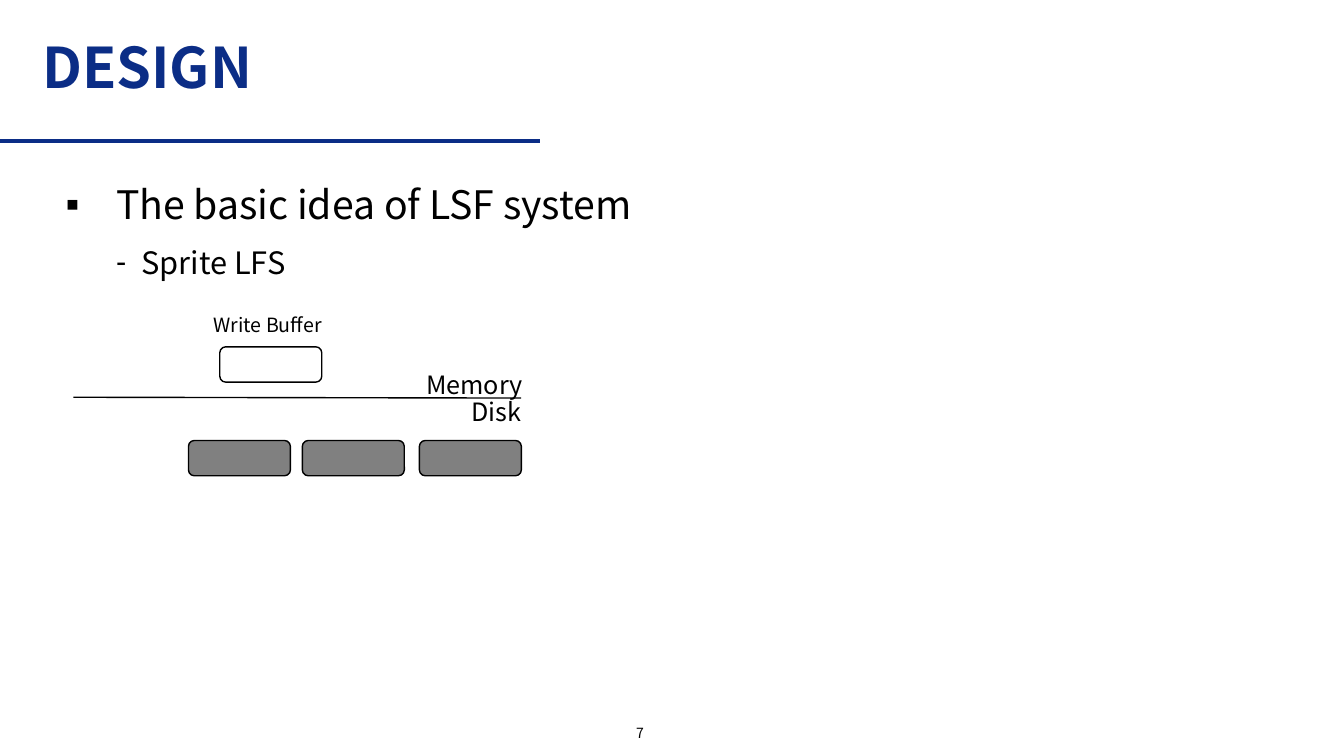
"""Build the design slide on the basic idea of a log-structured file system."""
from dataclasses import dataclass

import lxml.etree
import pptx
import pptx.dml.color
import pptx.enum.shapes
import pptx.enum.text
import pptx.oxml.ns
import pptx.util

Cm = pptx.util.Cm
Pt = pptx.util.Pt
RGBColor = pptx.dml.color.RGBColor
Align = pptx.enum.text.PP_ALIGN
Anchor = pptx.enum.text.MSO_ANCHOR

NAVY = RGBColor(0x0B, 0x2D, 0x86)
BLACK = RGBColor(0, 0, 0)
WHITE = RGBColor(255, 255, 255)
GRAY = RGBColor(0x80, 0x80, 0x80)
FONT = "Noto Sans CJK KR"
BLOCK_WIDTH, BLOCK_HEIGHT = 2.57, 0.89
DISK_TOP = 11.1


@dataclass
class Block:
    left: float
    top: float
    fill: RGBColor


@dataclass
class Label:
    text: str
    left: float
    top: float
    width: float
    height: float
    size: float
    align: Align = Align.LEFT
    anchor: Anchor = Anchor.TOP


@dataclass
class Rule:
    start: tuple[float, float]
    end: tuple[float, float]
    color: RGBColor
    weight: float


@dataclass
class Bullet:
    text: str
    level: int
    size: float
    mark: str
    margin: float
    hanging: float
    before: float


BLOCKS = [Block(5.54, 8.74, WHITE)] + [
    Block(left, DISK_TOP, GRAY) for left in (4.75, 7.62, 10.57)
]
LABELS = [
    Label("Write Buffer", 5.13, 7.77, 5.94, 0.86, 14),
    Label("Memory", 10.49, 9.17, 5.28, 1.02, 18),
    Label("Disk", 11.63, 9.86, 5.28, 1.02, 18),
    Label("7", 12.32, 18.06, 7.62, 0.81, 10, Align.CENTER, Anchor.MIDDLE),
]
RULES = [
    Rule((0, 3.56), (13.61, 3.56), NAVY, 3),
    Rule((1.85, 10.01), (13.13, 10.03), BLACK, 1),
]
BULLETS = [
    Bullet("The basic idea of LSF system", 0, 28, "▪", 1.27, 1.27, 0),
    Bullet("Sprite LFS", 1, 22, "-", 1.91, 0.64, 6),
]


def place(shape, left: float, top: float, width: float, height: float) -> None:
    shape.left, shape.top = Cm(left), Cm(top)
    shape.width, shape.height = Cm(width), Cm(height)


def write(para, text: str, *, size: float, color: RGBColor = BLACK,
          bold: bool = False, align: Align = Align.LEFT,
          spacing: float = 1.0, before: float = 0) -> None:
    para.alignment = align
    para.line_spacing = spacing
    para.space_before = Pt(before)
    span = para.add_run()
    span.text = text
    span.font.name = FONT
    span.font.size = Pt(size)
    span.font.bold = bold
    span.font.color.rgb = color


def draw_rule(page, rule: Rule) -> None:
    points = [Cm(value) for value in rule.start + rule.end]
    line = page.shapes.add_connector(
        pptx.enum.shapes.MSO_CONNECTOR.STRAIGHT, *points)
    line.line.color.rgb = rule.color
    line.line.width = Pt(rule.weight)
    lxml.etree.SubElement(line._element.spPr, pptx.oxml.ns.qn("a:effectLst"))


def draw_block(page, block: Block) -> None:
    box = page.shapes.add_shape(
        pptx.enum.shapes.MSO_SHAPE.ROUNDED_RECTANGLE,
        Cm(block.left), Cm(block.top), Cm(BLOCK_WIDTH), Cm(BLOCK_HEIGHT))
    box.shadow.inherit = False
    box.fill.solid()
    box.fill.fore_color.rgb = block.fill
    box.line.color.rgb = BLACK
    box.line.width = Pt(1)


def draw_label(page, label: Label) -> None:
    box = page.shapes.add_textbox(
        Cm(label.left), Cm(label.top), Cm(label.width), Cm(label.height))
    frame = box.text_frame
    frame.word_wrap = True
    frame.vertical_anchor = label.anchor
    write(frame.paragraphs[0], label.text, size=label.size, align=label.align)


def write_bullet(para, bullet: Bullet) -> None:
    para.level = bullet.level
    properties = para._p.get_or_add_pPr()
    properties.set("marL", str(Cm(bullet.margin)))
    properties.set("indent", str(-Cm(bullet.hanging)))
    mark = lxml.etree.SubElement(properties, pptx.oxml.ns.qn("a:buChar"))
    mark.set("char", bullet.mark)
    write(para, bullet.text, size=bullet.size, spacing=1.2,
          before=bullet.before)


def fill_placeholders(page) -> None:
    title = page.shapes.title
    place(title, 0.81, 0.61, 24.66, 2.31)
    title.text_frame.auto_size = pptx.enum.text.MSO_AUTO_SIZE.NONE
    title.text_frame.vertical_anchor = Anchor.MIDDLE
    write(title.text_frame.paragraphs[0], "DESIGN",
          size=40, color=NAVY, bold=True, spacing=0.9)

    body = page.placeholders[1]
    place(body, 1.4, 4.19, 15.29, 13.36)
    frame = body.text_frame
    frame.auto_size = pptx.enum.text.MSO_AUTO_SIZE.NONE
    for index, bullet in enumerate(BULLETS):
        para = frame.add_paragraph() if index else frame.paragraphs[0]
        write_bullet(para, bullet)


def main() -> None:
    deck = pptx.Presentation()
    deck.slide_width, deck.slide_height = Cm(33.87), Cm(19.05)
    page = deck.slides.add_slide(deck.slide_layouts[1])
    fill_placeholders(page)
    for rule in RULES:
        draw_rule(page, rule)
    for block in BLOCKS:
        draw_block(page, block)
    for label in LABELS:
        draw_label(page, label)
    deck.save("out.pptx")


if __name__ == "__main__":
    main()
